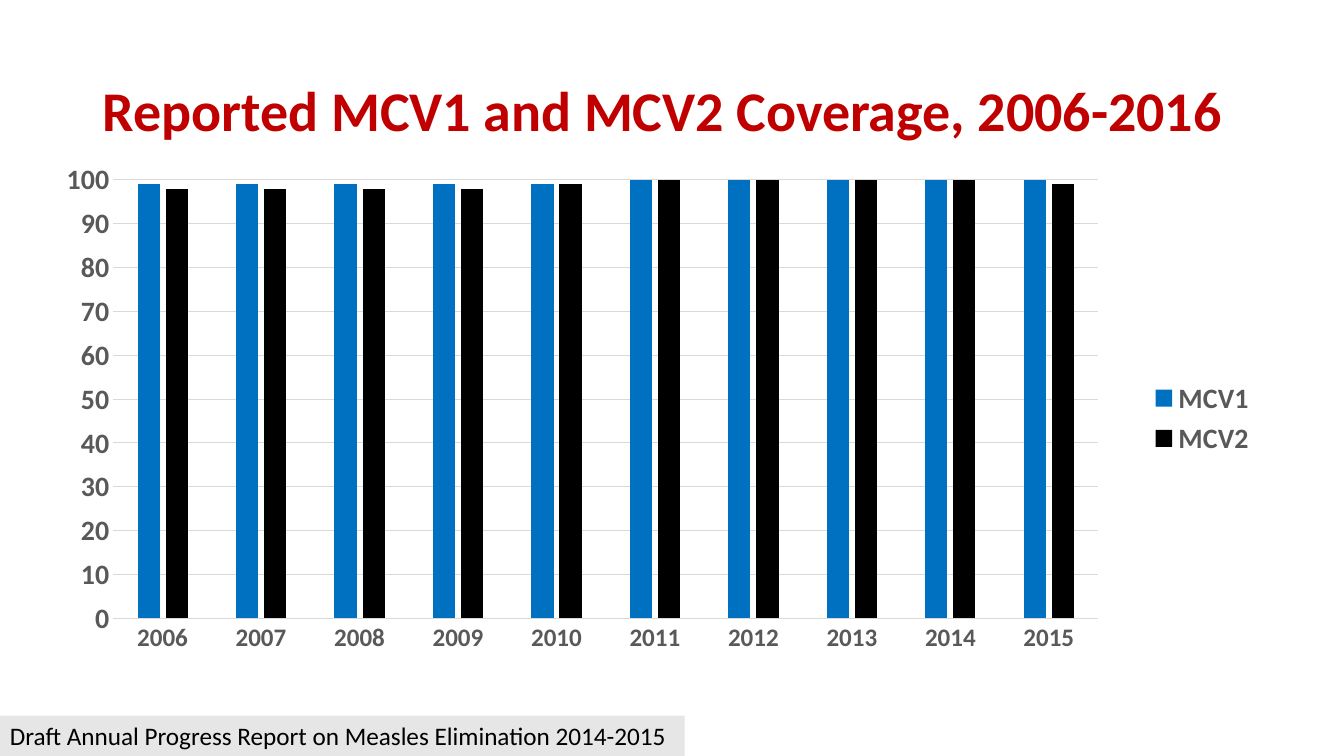
import pptx
import pptx.chart.data
import pptx.dml.color
import pptx.enum.chart
import pptx.enum.text
import pptx.util
from lxml import etree
from pptx.util import Inches

RED = pptx.dml.color.RGBColor(0xC0, 0x00, 0x00)
BLUE = pptx.dml.color.RGBColor(0x00, 0x70, 0xC0)
BLACK = pptx.dml.color.RGBColor(0x00, 0x00, 0x00)
TEXT_GREY = pptx.dml.color.RGBColor(0x59, 0x59, 0x59)
LINE_GREY = pptx.dml.color.RGBColor(0xD9, 0xD9, 0xD9)
PALE_GREY = pptx.dml.color.RGBColor(0xE7, 0xE6, 0xE6)

YEARS = [str(year) for year in range(2006, 2016)]
COVERAGE = {
    "MCV1": (BLUE, [99, 99, 99, 99, 99, 100, 100, 100, 100, 100]),
    "MCV2": (BLACK, [98, 98, 98, 98, 99, 100, 100, 100, 100, 99]),
}
PLOT_AREA = {"x": 0.033, "y": 0.038, "w": 0.826, "h": 0.85}


def set_font(font, size, color, bold):
    values = {"name": "Calibri", "size": pptx.util.Pt(size), "bold": bold}
    for attribute, value in values.items():
        setattr(font, attribute, value)
    font.color.rgb = color


def set_line(line):
    line.color.rgb = LINE_GREY
    line.width = pptx.util.Pt(0.75)


deck = pptx.Presentation()
deck.slide_width = Inches(13.33)
deck.slide_height = Inches(7.5)
slide = deck.slides.add_slide(deck.slide_layouts[5])

# Title
title = slide.shapes.title
title.left, title.top = Inches(0.92), Inches(0.4)
title.width, title.height = Inches(11.5), Inches(1.45)
title.text_frame.text = "Reported MCV1 and MCV2 Coverage, 2006-2016"
title.text_frame.vertical_anchor = pptx.enum.text.MSO_ANCHOR.MIDDLE
heading = title.text_frame.paragraphs[0]
heading.alignment = pptx.enum.text.PP_ALIGN.LEFT
heading.line_spacing = 0.9
set_font(heading.runs[0].font, 40, RED, True)

# Coverage chart
coverage_data = pptx.chart.data.CategoryChartData()
coverage_data.categories = YEARS
for vaccine, (color, percentages) in COVERAGE.items():
    coverage_data.add_series(vaccine, percentages)
coverage = slide.shapes.add_chart(
    pptx.enum.chart.XL_CHART_TYPE.COLUMN_CLUSTERED,
    Inches(0.66), Inches(1.59), Inches(11.9), Inches(5.12), coverage_data,
).chart
coverage.has_title = False
set_font(coverage.font, 10, BLACK, False)

columns = coverage.plots[0]
columns.gap_width = 219
columns.overlap = -27
columns.vary_by_categories = False
for series in columns.series:
    series.format.fill.solid()
    series.format.fill.fore_color.rgb = COVERAGE[series.name][0]

# Axes and gridlines
year_axis, percent_axis = coverage.category_axis, coverage.value_axis
for axis, size in ((year_axis, 18), (percent_axis, 20)):
    axis.major_tick_mark = pptx.enum.chart.XL_TICK_MARK.NONE
    axis.minor_tick_mark = pptx.enum.chart.XL_TICK_MARK.NONE
    set_font(axis.tick_labels.font, size, TEXT_GREY, True)
set_line(year_axis.format.line)
percent_scale = {"minimum_scale": 0, "maximum_scale": 100, "major_unit": 10}
for attribute, value in percent_scale.items():
    setattr(percent_axis, attribute, value)
percent_axis.format.line.fill.background()
set_line(percent_axis.major_gridlines.format.line)

# Legend
coverage.has_legend = True
coverage.legend.position = pptx.enum.chart.XL_LEGEND_POSITION.RIGHT
coverage.legend.include_in_layout = False
set_font(coverage.legend.font, 20, TEXT_GREY, True)

# Fixed inner plot area
C = "{http://schemas.openxmlformats.org/drawingml/2006/chart}"
plot_area = coverage.element.find(f".//{C}plotArea")
layout = plot_area.find(f"{C}layout")
if layout is None:
    layout = etree.Element(f"{C}layout")
    plot_area.insert(0, layout)
manual = etree.SubElement(layout, f"{C}manualLayout")
settings = {"layoutTarget": "inner", "xMode": "edge", "yMode": "edge", **PLOT_AREA}
for tag, value in settings.items():
    etree.SubElement(manual, f"{C}{tag}").set("val", str(value))

# Source strip
source = slide.shapes.add_textbox(Inches(0), Inches(7.1), Inches(6.79), Inches(0.4))
source.fill.solid()
source.fill.fore_color.rgb = PALE_GREY
source.text_frame.text = "Draft Annual Progress Report on Measles Elimination 2014-2015"
source.text_frame.word_wrap = False
source.text_frame.auto_size = pptx.enum.text.MSO_AUTO_SIZE.SHAPE_TO_FIT_TEXT
set_font(source.text_frame.paragraphs[0].runs[0].font, 18, BLACK, False)

deck.save("out.pptx")
